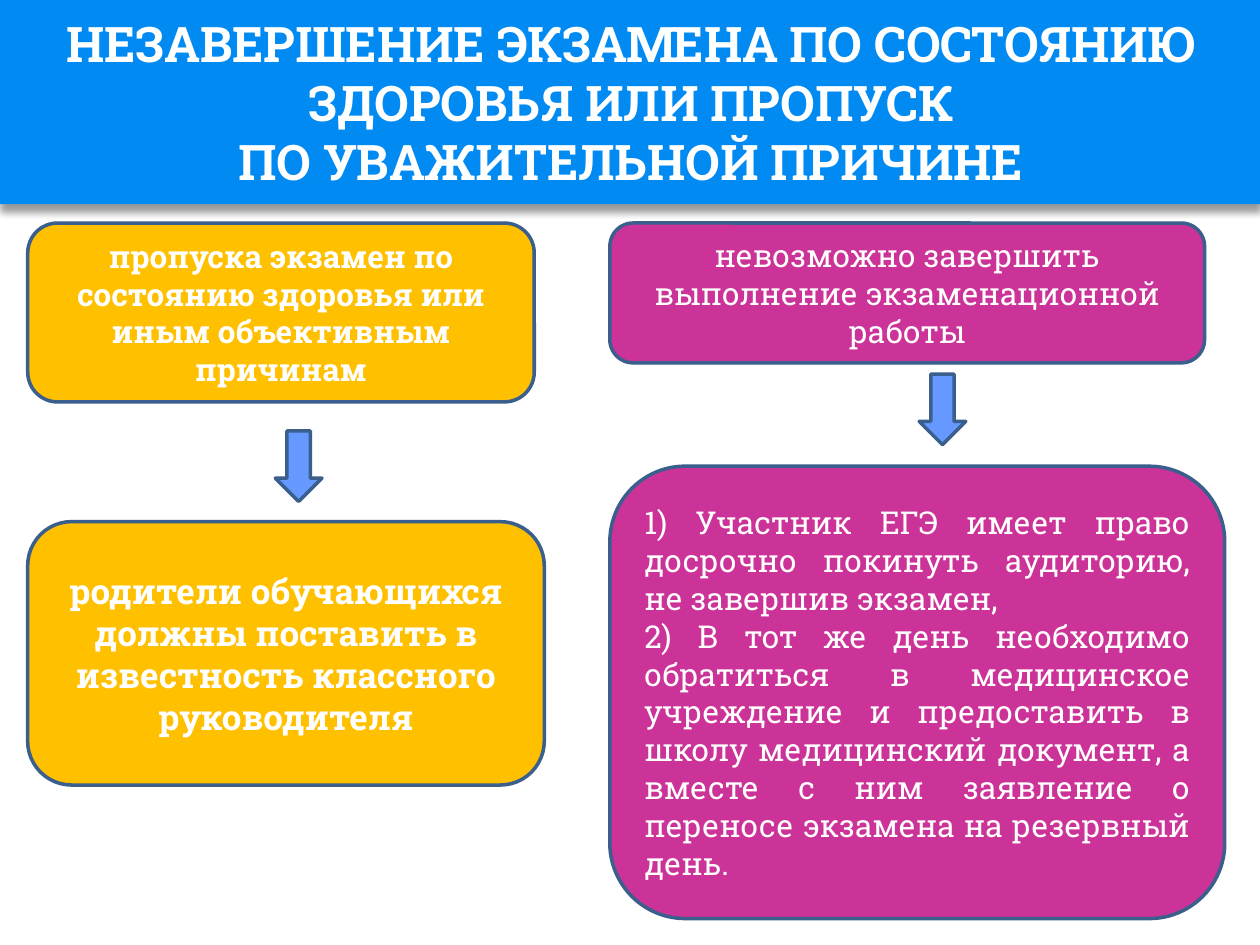
from lxml import etree
from pptx import Presentation
from pptx import util as u
from pptx.dml.color import RGBColor
from pptx.enum import shapes, text
from pptx.oxml.ns import qn

FONT = "Roboto Slab"
BLUE, YELLOW, PINK, ARROW, OUTLINE = "008AF2", "FFC000", "CC3399", "6699FF", "3A5F8C"
WHITE, BLACK = "FFFFFF", "000000"
LEFT_COLUMN, RIGHT_COLUMN = 0.22, 4.84
TOP_ROW = 1.77
ARROW_LENGTH, ARROW_WIDTH = 0.56, 0.37
CENTER, JUSTIFY = text.PP_ALIGN.CENTER, text.PP_ALIGN.JUSTIFY


def color(value):
    return RGBColor.from_string(value)


def add_block(slide, kind, box, fill, outline=OUTLINE):
    shape = slide.shapes.add_shape(kind, *(u.Inches(length) for length in box))
    shape.shadow.inherit = False
    shape.fill.solid()
    shape.fill.fore_color.rgb = color(fill)
    if outline:
        shape.line.color.rgb = color(outline)
        shape.line.width = u.Pt(2)
    else:
        shape.line.fill.background()
    return shape


def write(shape, *lines, size=18, bold=False, align=CENTER):
    frame = shape.text_frame
    frame.word_wrap = True
    frame.vertical_anchor = text.MSO_ANCHOR.MIDDLE
    for index, line in enumerate(lines):
        paragraph = frame.add_paragraph() if index else frame.paragraphs[0]
        paragraph.alignment = align
        run = paragraph.add_run()
        run.text = line
        run.font.name = FONT
        run.font.size = u.Pt(size)
        run.font.bold = bold
        run.font.color.rgb = color(WHITE)


def add_card(slide, box, fill, *lines, **style):
    card = add_block(slide, shapes.MSO_SHAPE.ROUNDED_RECTANGLE, box, fill)
    write(card, *lines, **style)


def add_down_arrow(slide, center_x, center_y):
    box = (center_x - ARROW_LENGTH / 2, center_y - ARROW_WIDTH / 2,
           ARROW_LENGTH, ARROW_WIDTH)
    add_block(slide, shapes.MSO_SHAPE.RIGHT_ARROW, box, ARROW).rotation = 90


def add_drop_shadow(shape):
    effects = shape._element.spPr.find(qn("a:effectLst"))
    shadow = etree.SubElement(effects, qn("a:outerShdw"), blurRad=str(u.Pt(4)),
                              dist=str(u.Pt(4)), dir="5400000", rotWithShape="0")
    tint = etree.SubElement(shadow, qn("a:srgbClr"), val=BLACK)
    etree.SubElement(tint, qn("a:alpha"), val="40000")


def main():
    presentation = Presentation()
    presentation.slide_width, presentation.slide_height = u.Inches(10), u.Inches(7.5)
    slide = presentation.slides.add_slide(presentation.slide_layouts[6])

    # Title band
    band = add_block(slide, shapes.MSO_SHAPE.RECTANGLE, (0, 0, 10.01, 1.62), BLUE, None)
    add_drop_shadow(band)
    write(band, "НЕЗАВЕРШЕНИЕ ЭКЗАМЕНА ПО СОСТОЯНИЮ ЗДОРОВЬЯ ИЛИ ПРОПУСК",
          "ПО УВАЖИТЕЛЬНОЙ ПРИЧИНЕ", size=28, bold=True)

    # Left column: missed exam
    add_card(slide, (LEFT_COLUMN, TOP_ROW, 4.02, 1.42), YELLOW,
             "пропуска экзамен по состоянию здоровья или иным объективным причинам",
             bold=True)
    add_card(slide, (LEFT_COLUMN, 4.14, 4.1, 2.09), YELLOW,
             "родители обучающихся должны поставить в известность классного руководителя",
             size=20, bold=True)

    # Right column: unfinished exam
    add_card(slide, (RIGHT_COLUMN, TOP_ROW, 4.72, 1.11), PINK,
             "невозможно завершить выполнение экзаменационной работы")
    add_card(slide, (RIGHT_COLUMN, 3.7, 4.88, 3.59), PINK,
             "1) Участник ЕГЭ имеет право досрочно покинуть аудиторию, "
             "не завершив экзамен,",
             "2) В тот же день необходимо обратиться в медицинское учреждение "
             "и предоставить в школу медицинский документ, а вместе с ним "
             "заявление о переносе экзамена на резервный день.",
             align=JUSTIFY)

    # Arrows from cause to action
    add_down_arrow(slide, 2.37, 3.7)
    add_down_arrow(slide, 7.48, 3.25)

    presentation.save("out.pptx")


if __name__ == "__main__":
    main()
